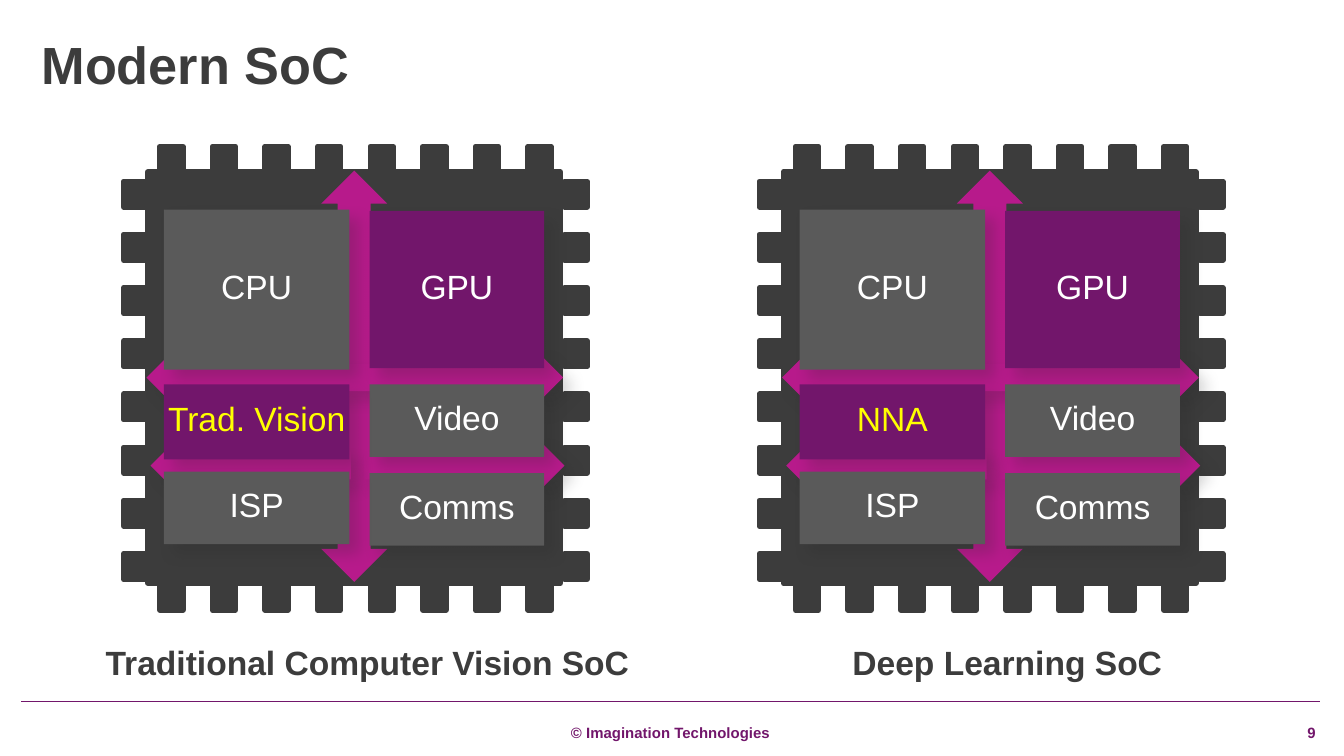
from dataclasses import dataclass

from lxml.etree import SubElement
from pptx import Presentation
from pptx.dml.color import RGBColor
from pptx.enum.shapes import MSO_CONNECTOR as Connector, MSO_SHAPE as Shape
from pptx.enum.text import MSO_ANCHOR as Anchor, PP_ALIGN as Align
from pptx.oxml.ns import qn
from pptx.util import Inches, Pt

CHARCOAL, GREY = "3C3C3C", "5A5A5A"
PURPLE, MAGENTA = "72166B", "B71A8B"
WHITE, YELLOW = "FFFFFF", "FFFF00"
FONT = "Arial"
PAGE_WIDTH = 10
PAGE_HEIGHT = PAGE_WIDTH * 9 / 16
PIN_COUNT = 8
PIN_WIDTH, PIN_HEIGHT = 0.17, 0.19


@dataclass(frozen=True)
class Area:
    left: float
    top: float
    width: float
    height: float

    def shifted(self, offset: float) -> "Area":
        return Area(self.left + offset, self.top, self.width, self.height)

    def lengths(self) -> list:
        return [Inches(n) for n in (self.left, self.top, self.width, self.height)]


@dataclass(frozen=True)
class Arrow:
    preset: Shape
    area: Area
    shaded: bool = True


@dataclass(frozen=True)
class Block:
    label: str
    area: Area
    fill: str = GREY
    ink: str = WHITE


@dataclass(frozen=True)
class Chip:
    offset: float
    vision_label: str
    caption: str
    caption_area: Area


BODY = Area(1.1, 1.28, 3.07, 3.06)
ARROWS = [
    Arrow(Shape.UP_DOWN_ARROW, Area(2.39, 1.27, 0.49, 3.06), shaded=False),
    Arrow(Shape.RIGHT_ARROW, Area(2.71, 3.26, 1.49, 0.41)),
    Arrow(Shape.LEFT_RIGHT_ARROW, Area(1.09, 2.61, 3.1, 0.4)),
    Arrow(Shape.LEFT_ARROW, Area(1.12, 3.26, 1.49, 0.41)),
]
COMMON_BLOCKS = [
    Block("CPU", Area(1.22, 1.56, 1.38, 1.19)),
    Block("GPU", Area(2.75, 1.57, 1.3, 1.17), PURPLE),
    Block("Video", Area(2.75, 2.86, 1.3, 0.54)),
]
LOWER_BLOCKS = [
    Block("Comms", Area(2.75, 3.52, 1.3, 0.54)),
    Block("ISP", Area(1.22, 3.51, 1.38, 0.54)),
]
VISION_AREA = Area(1.22, 2.86, 1.38, 0.56)
CHIPS = [
    Chip(0, "Trad. Vision", "Traditional Computer Vision SoC", Area(0.43, 4.78, 4.61, 0.48)),
    Chip(4.73, "NNA", "Deep Learning SoC", Area(5.19, 4.78, 4.61, 0.48)),
]


def colour(code: str) -> RGBColor:
    return RGBColor.from_string(code)


def add_span(para, text: str, size: float, ink: str, bold: bool = False) -> None:
    span = para.add_run()
    span.text = text
    span.font.name = FONT
    span.font.size = Pt(size)
    span.font.bold = bold
    span.font.color.rgb = colour(ink)


def clear_margins(frame) -> None:
    frame.margin_left = frame.margin_right = 0
    frame.margin_top = frame.margin_bottom = 0


def add_box(page, area: Area, wrap: bool = True):
    frame = page.shapes.add_textbox(*area.lengths()).text_frame
    clear_margins(frame)
    frame.word_wrap = wrap
    return frame.paragraphs[0]


def add_solid(group, preset: Shape, area: Area, fill: str, outlined: bool = False):
    shape = group.shapes.add_shape(preset, *area.lengths())
    shape.shadow.inherit = False
    shape.fill.solid()
    shape.fill.fore_color.rgb = colour(fill)
    if outlined:
        shape.line.color.rgb = colour(fill)
        shape.line.width = Pt(3)
    else:
        shape.line.fill.background()
    return shape


def add_shadow(shape) -> None:
    effects = shape._element.spPr.find(qn("a:effectLst"))
    shadow = SubElement(
        effects, qn("a:outerShdw"), blurRad=str(Pt(8)), dist=str(Pt(7)),
        dir=str(45 * 60000), algn="tl", rotWithShape="0",
    )
    tint = SubElement(shadow, qn("a:srgbClr"), val="262626")
    SubElement(tint, qn("a:alpha"), val="20000")


def add_pins(group, offset: float) -> None:
    column_gap = (3.93 - 1.19) / (PIN_COUNT - 1)
    row_gap = (4.12 - 1.35) / (PIN_COUNT - 1)
    for index in range(PIN_COUNT):
        column, row = 1.19 + index * column_gap, 1.35 + index * row_gap
        for left, top in ((column, 1.09), (column, 4.35), (0.92, row), (4.2, row)):
            pin = Area(left, top, PIN_WIDTH, PIN_HEIGHT).shifted(offset)
            add_solid(group, Shape.RECTANGLE, pin, CHARCOAL, outlined=True)


def add_block(group, block: Block, offset: float) -> None:
    shape = add_solid(group, Shape.RECTANGLE, block.area.shifted(offset), block.fill)
    add_shadow(shape)
    frame = shape.text_frame
    clear_margins(frame)
    frame.word_wrap = True
    frame.vertical_anchor = Anchor.MIDDLE
    para = frame.paragraphs[0]
    para.alignment = Align.CENTER
    para.line_spacing = 0.8
    add_span(para, block.label, 18, block.ink)


def add_chip(page, chip: Chip) -> None:
    group = page.shapes.add_group_shape()
    add_pins(group, chip.offset)
    add_solid(group, Shape.RECTANGLE, BODY.shifted(chip.offset), CHARCOAL, outlined=True)
    for arrow in ARROWS:
        shape = add_solid(group, arrow.preset, arrow.area.shifted(chip.offset), MAGENTA)
        if arrow.shaded:
            add_shadow(shape)
    vision = Block(chip.vision_label, VISION_AREA, PURPLE, YELLOW)
    for block in [*COMMON_BLOCKS, vision, *LOWER_BLOCKS]:
        add_block(group, block, chip.offset)
    para = add_box(page, chip.caption_area)
    para.alignment = Align.CENTER
    para.space_after = Pt(6)
    add_span(para, chip.caption, 18, CHARCOAL, bold=True)


def add_title(page) -> None:
    para = add_box(page, Area(0.31, 0.31, 9.51, 0.35), wrap=False)
    para.line_spacing = 0.85
    add_span(para, "Modern SoC", 28, CHARCOAL, bold=True)


def add_footer(page) -> None:
    rule = page.shapes.add_connector(
        Connector.STRAIGHT, Inches(0.16), Inches(5.22), Inches(9.82), Inches(5.22)
    )
    rule.line.color.rgb = colour(PURPLE)
    rule.line.width = Pt(0.5)
    SubElement(rule._element.spPr, qn("a:effectLst"))
    para = add_box(page, Area(0.18, 5.4, 9.64, 0.12))
    stops = SubElement(para._p.get_or_add_pPr(), qn("a:tabLst"))
    for position, align in ((4.81, "ctr"), (9.61, "r")):
        SubElement(stops, qn("a:tab"), pos=str(Inches(position)), algn=align)
    para.line_spacing = 0.9
    add_span(para, "\t© Imagination Technologies\t9", 8, PURPLE, bold=True)


def main() -> None:
    deck = Presentation()
    deck.slide_width, deck.slide_height = Inches(PAGE_WIDTH), Inches(PAGE_HEIGHT)
    page = deck.slides.add_slide(deck.slide_layouts[6])
    add_footer(page)
    add_title(page)
    for chip in CHIPS:
        add_chip(page, chip)
    deck.save("out.pptx")


if __name__ == "__main__":
    main()
